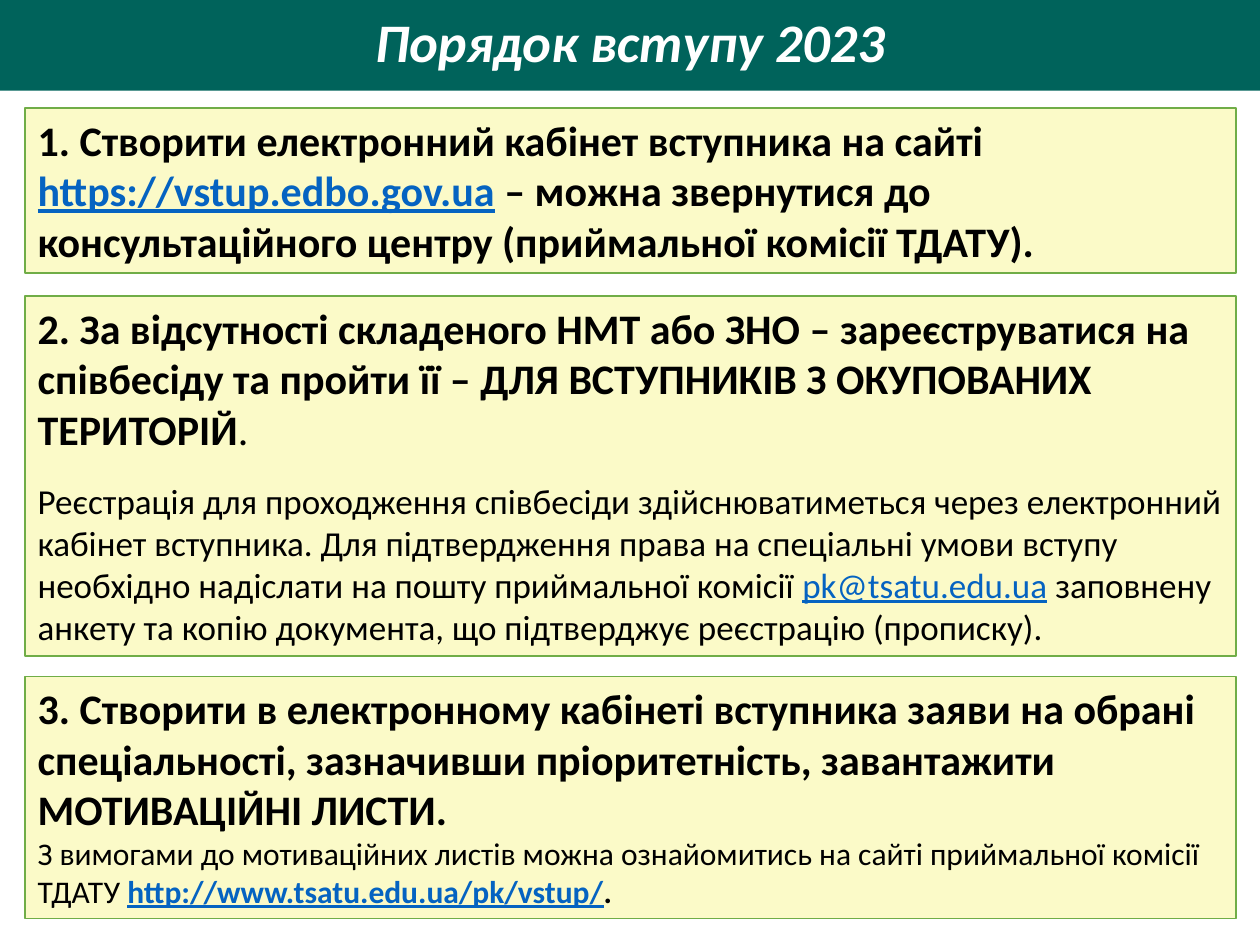
"""Build the slide on the 2023 admission procedure."""
import pptx
import pptx.dml.color
import pptx.enum.shapes
import pptx.enum.text
import pptx.util

Inches = pptx.util.Inches
Pt = pptx.util.Pt

COLOURS = {
    "banner": "00635B",
    "title": "FFFFFF",
    "panel": "FBFAC8",
    "border": "70AD47",
    "text": "000000",
    "link": "0563C1",
}
FONT = "Calibri"
TITLE = "Порядок вступу 2023"
PANEL_LEFT, PANEL_WIDTH = 0.2, 9.61

STEPS = [
    {"top": 0.86, "height": 1.31, "paragraphs": [
        {"size": 24, "before": 0, "spans": [
            ("1. Створити електронний кабінет вступника на сайті ", "bold"),
            ("https://vstup.edbo.gov.ua", "bold link"),
            (" – можна звернутися до консультаційного центру "
             "(приймальної комісії ТДАТУ).", "bold"),
        ]},
    ]},
    {"top": 2.35, "height": 2.86, "paragraphs": [
        {"size": 24, "before": 0, "spans": [
            ("2. За відсутності складеного НМТ або ЗНО – зареєструватися на "
             "співбесіду та пройти її – ДЛЯ ВСТУПНИКІВ З ОКУПОВАНИХ ТЕРИТОРІЙ", "bold"),
            (".", ""),
        ]},
        {"size": 20, "before": 14.6, "spans": [
            ("Реєстрація для проходження співбесіди здійснюватиметься через "
             "електронний кабінет вступника. Для підтвердження права на "
             "спеціальні умови вступу необхідно надіслати на пошту "
             "приймальної комісії ", ""),
            ("pk@tsatu.edu.ua", "link"),
            (" заповнену анкету та копію документа, що підтверджує "
             "реєстрацію (прописку).", ""),
        ]},
    ]},
    {"top": 5.37, "height": 1.92, "paragraphs": [
        {"size": 24, "before": 0, "spans": [
            ("3. Створити в електронному кабінеті вступника заяви на обрані "
             "спеціальності, зазначивши пріоритетність, завантажити "
             "МОТИВАЦІЙНІ ЛИСТИ.", "bold"),
        ]},
        {"size": 18, "before": 0, "spans": [
            ("З вимогами до мотиваційних листів можна ознайомитись на сайті "
             "приймальної комісії ТДАТУ ", ""),
            ("http://www.tsatu.edu.ua/pk/vstup/", "bold link"),
            (".", "bold"),
        ]},
    ]},
]


def colour(name):
    return pptx.dml.color.RGBColor.from_string(COLOURS[name])


def paint(shape, name):
    shape.fill.solid()
    shape.fill.fore_color.rgb = colour(name)


def style(font, size, name, bold):
    font.name = FONT
    font.size = Pt(size)
    font.bold = bold
    font.color.rgb = colour(name)


def add_title(page):
    title = page.shapes.title
    title.left, title.top = Inches(0), Inches(-0.01)
    title.width, title.height = Inches(10), Inches(0.73)
    paint(title, "banner")
    frame = title.text_frame
    frame.text = TITLE
    frame.word_wrap = True
    frame.auto_size = pptx.enum.text.MSO_AUTO_SIZE.NONE
    frame.vertical_anchor = pptx.enum.text.MSO_ANCHOR.MIDDLE
    frame.margin_left = frame.margin_right = Inches(0.13)
    frame.margin_top = frame.margin_bottom = Inches(0.13)
    para = frame.paragraphs[0]
    para.alignment = pptx.enum.text.PP_ALIGN.CENTER
    para.line_spacing = 0.9
    font = para.runs[0].font
    style(font, 31, "title", True)
    font.italic = True


def add_step(page, step):
    box = page.shapes.add_shape(
        pptx.enum.shapes.MSO_SHAPE.RECTANGLE,
        Inches(PANEL_LEFT), Inches(step["top"]),
        Inches(PANEL_WIDTH), Inches(step["height"]))
    box.shadow.inherit = False
    paint(box, "panel")
    box.line.color.rgb = colour("border")
    box.line.width = Pt(1)
    frame = box.text_frame
    frame.word_wrap = True
    frame.auto_size = pptx.enum.text.MSO_AUTO_SIZE.SHAPE_TO_FIT_TEXT
    frame.vertical_anchor = pptx.enum.text.MSO_ANCHOR.TOP
    for index, content in enumerate(step["paragraphs"]):
        para = frame.add_paragraph() if index else frame.paragraphs[0]
        para.alignment = pptx.enum.text.PP_ALIGN.LEFT
        para.space_before = Pt(content["before"])
        for text, look in content["spans"]:
            span = para.add_run()
            span.text = text
            is_link = "link" in look
            style(span.font, content["size"], "link" if is_link else "text", "bold" in look)
            span.font.underline = is_link


def main():
    deck = pptx.Presentation()
    deck.slide_width, deck.slide_height = Inches(10), Inches(7.5)
    page = deck.slides.add_slide(deck.slide_layouts[5])
    add_title(page)
    for step in STEPS:
        add_step(page, step)
    deck.save("out.pptx")


if __name__ == "__main__":
    main()
